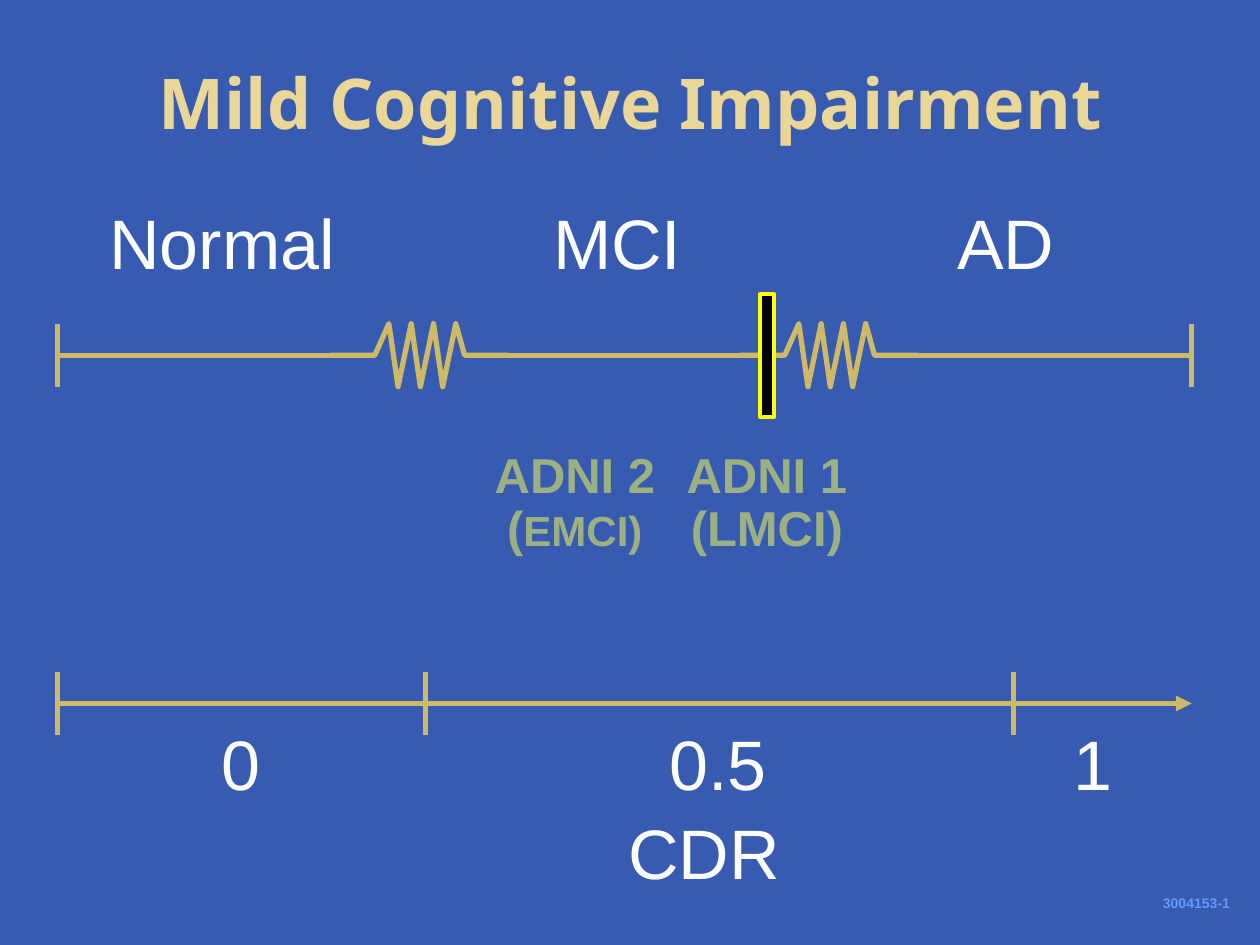
"""Build a slide that sets the stages of cognitive impairment against the CDR scale."""
from dataclasses import dataclass
from typing import Optional

from lxml import etree
from pptx import Presentation
from pptx.dml.color import RGBColor
from pptx.enum.shapes import MSO_CONNECTOR, MSO_SHAPE
from pptx.enum.text import MSO_ANCHOR, MSO_AUTO_SIZE, PP_ALIGN
from pptx.oxml.ns import qn
from pptx.util import Pt

LEFT, CENTER, RIGHT = PP_ALIGN.LEFT, PP_ALIGN.CENTER, PP_ALIGN.RIGHT
TOP, MIDDLE = MSO_ANCHOR.TOP, MSO_ANCHOR.MIDDLE
GROW = MSO_AUTO_SIZE.SHAPE_TO_FIT_TEXT
STRAIGHT = MSO_CONNECTOR.STRAIGHT
RECTANGLE = MSO_SHAPE.RECTANGLE


@dataclass(frozen=True)
class Theme:
    background: str = "375BB0"
    title: str = "EAD696"
    label: str = "FFFFFF"
    study: str = "9CB084"
    code: str = "6699FF"
    axis: str = "CEB966"
    marker_fill: str = "000000"
    marker_line: str = "FFFF00"
    title_font: str = "Noto Sans"
    font: str = "Arial"
    large: float = 40
    medium: float = 28
    reduced: float = 24
    small: float = 8
    axis_width: float = 3
    marker_width: float = 2.25


@dataclass(frozen=True)
class Box:
    left: float
    top: float
    width: float
    height: float

    def lengths(self) -> tuple:
        return Pt(self.left), Pt(self.top), Pt(self.width), Pt(self.height)


@dataclass(frozen=True)
class Run:
    text: str
    size: float


@dataclass(frozen=True)
class Label:
    text: str
    left: float
    top: float
    width: float
    align: PP_ALIGN


THEME = Theme()
AXIS_LEFT, AXIS_RIGHT = 33, 681
STAGE_Y, SCALE_Y = 203, 402
TICK = 18
LABEL_HEIGHT = 55.5
STAGE_LABEL_TOP, SCALE_LABEL_TOP = 110.25, 408
BREAK_STARTS = (188.75, 423)
BREAK_WIDTH, BREAK_PEAKS = 102, 4
FIRST_PEAK, PEAK_STEP, PEAK_TO_TROUGH = 33.5, 12.75, 5.25
ZIGZAG_START, ZIGZAG_END = 25.5, 76.75
STAGE_SEGMENTS = ((AXIS_LEFT, 195), (279, 441), (519, AXIS_RIGHT))
SCALE_TICKS = (AXIS_LEFT, 243, 579)
LABELS = (
    Label("Normal", 55.5, STAGE_LABEL_TOP, 148.5, LEFT),
    Label("MCI", 309, STAGE_LABEL_TOP, 90, LEFT),
    Label("AD", 540, STAGE_LABEL_TOP, 80, LEFT),
    Label("0", 118, SCALE_LABEL_TOP, 39.75, CENTER),
    Label("0.5", 366.25, SCALE_LABEL_TOP, 88.5, CENTER),
    Label("1", 604.5, SCALE_LABEL_TOP, 39.75, CENTER),
    Label("CDR", 328.5, 459, 147.5, CENTER),
)


def rgb(value: str) -> RGBColor:
    return RGBColor.from_string(value)


def add_text(slide, box: Box, paragraphs: tuple, *, color: str, font: str = THEME.font,
             bold: bool = False, align: PP_ALIGN = CENTER, anchor: MSO_ANCHOR = TOP,
             line_spacing: Optional[float] = None, before_percent: int = 0,
             wrap: bool = True, grow: bool = True) -> None:
    frame = slide.shapes.add_textbox(*box.lengths()).text_frame
    frame.word_wrap = wrap
    frame.vertical_anchor = anchor
    if grow:
        frame.auto_size = GROW
    for index, runs in enumerate(paragraphs):
        paragraph = frame.add_paragraph() if index else frame.paragraphs[0]
        paragraph.alignment = align
        paragraph.line_spacing = line_spacing
        if before_percent:
            properties = paragraph._p.get_or_add_pPr()
            before = etree.SubElement(properties, qn("a:spcBef"))
            etree.SubElement(before, qn("a:spcPct"), val=str(before_percent * 1000))
        for item in runs:
            for line_index, line in enumerate(item.text.split("\n")):
                if line_index:
                    paragraph.add_line_break()
                run = paragraph.add_run()
                run.text = line
                run.font.size = Pt(item.size)
                run.font.name = font
                run.font.bold = bold
                run.font.color.rgb = rgb(color)


def style_axis(line) -> None:
    line.color.rgb = rgb(THEME.axis)
    line.width = Pt(THEME.axis_width)


def add_line(slide, start: tuple, end: tuple, *, arrow: bool = False) -> None:
    connector = slide.shapes.add_connector(STRAIGHT, *map(Pt, start + end))
    style_axis(connector.line)
    if arrow:
        etree.SubElement(connector.line._get_or_add_ln(), qn("a:tailEnd"), type="triangle")
    etree.SubElement(connector._element.spPr, qn("a:effectLst"))


def add_tick(slide, x: float, y: float) -> None:
    add_line(slide, (x, y + TICK), (x, y - TICK))


def add_axis_break(slide, left: float) -> None:
    points = [(left + ZIGZAG_START, STAGE_Y)]
    for index in range(BREAK_PEAKS):
        peak = left + FIRST_PEAK + index * PEAK_STEP
        points += [(peak, STAGE_Y - TICK), (peak + PEAK_TO_TROUGH, STAGE_Y + TICK)]
    points[-1] = (left + ZIGZAG_END, STAGE_Y)
    points.append((left + BREAK_WIDTH, STAGE_Y))
    builder = slide.shapes.build_freeform(Pt(left), Pt(STAGE_Y))
    builder.add_line_segments([(Pt(x), Pt(y)) for x, y in points], close=False)
    shape = builder.convert_to_shape()
    shape.shadow.inherit = False
    shape.fill.background()
    style_axis(shape.line)
    etree.SubElement(shape.line._get_or_add_ln(), qn("a:round"))


def add_marker(slide, box: Box) -> None:
    shape = slide.shapes.add_shape(RECTANGLE, *box.lengths())
    shape.shadow.inherit = False
    shape.fill.solid()
    shape.fill.fore_color.rgb = rgb(THEME.marker_fill)
    shape.line.color.rgb = rgb(THEME.marker_line)
    shape.line.width = Pt(THEME.marker_width)


def main() -> None:
    presentation = Presentation()
    presentation.slide_width, presentation.slide_height = Pt(720), Pt(540)
    slide = presentation.slides.add_slide(presentation.slide_layouts[6])
    slide.background.fill.solid()
    slide.background.fill.fore_color.rgb = rgb(THEME.background)

    add_text(slide, Box(0, 24, 720, 63), ((Run("Mild Cognitive Impairment", THEME.large),),),
             color=THEME.title, font=THEME.title_font, bold=True, anchor=MIDDLE,
             line_spacing=1.1, grow=False)
    for label in LABELS:
        add_text(slide, Box(label.left, label.top, label.width, LABEL_HEIGHT),
                 ((Run(label.text, THEME.large),),), color=THEME.label,
                 align=label.align, before_percent=50)

    for left in BREAK_STARTS:
        add_axis_break(slide, left)
    for start, end in STAGE_SEGMENTS:
        add_line(slide, (start, STAGE_Y), (end, STAGE_Y))
    for x in (AXIS_LEFT, AXIS_RIGHT):
        add_tick(slide, x, STAGE_Y)
    add_line(slide, (AXIS_LEFT, SCALE_Y), (AXIS_RIGHT, SCALE_Y), arrow=True)
    for x in SCALE_TICKS:
        add_tick(slide, x, SCALE_Y)

    add_marker(slide, Box(434.25, 168, 8, 70.5))
    add_text(slide, Box(359.5, 254.25, 157.5, 67.5),
             ((Run("ADNI 1", THEME.medium),), (Run("(LMCI)", THEME.medium),)),
             color=THEME.study, bold=True, line_spacing=0.9)
    add_text(slide, Box(254.75, 254.25, 147.5, 67.5),
             ((Run("ADNI 2\n(", THEME.medium), Run("EMCI)", THEME.reduced)),),
             color=THEME.study, bold=True, line_spacing=0.9, before_percent=50)
    add_text(slide, Box(656.75, 507.5, 53.25, 16.75), ((Run("3004153-1", THEME.small),),),
             color=THEME.code, bold=True, align=RIGHT, wrap=False)
    presentation.save("out.pptx")


if __name__ == "__main__":
    main()
